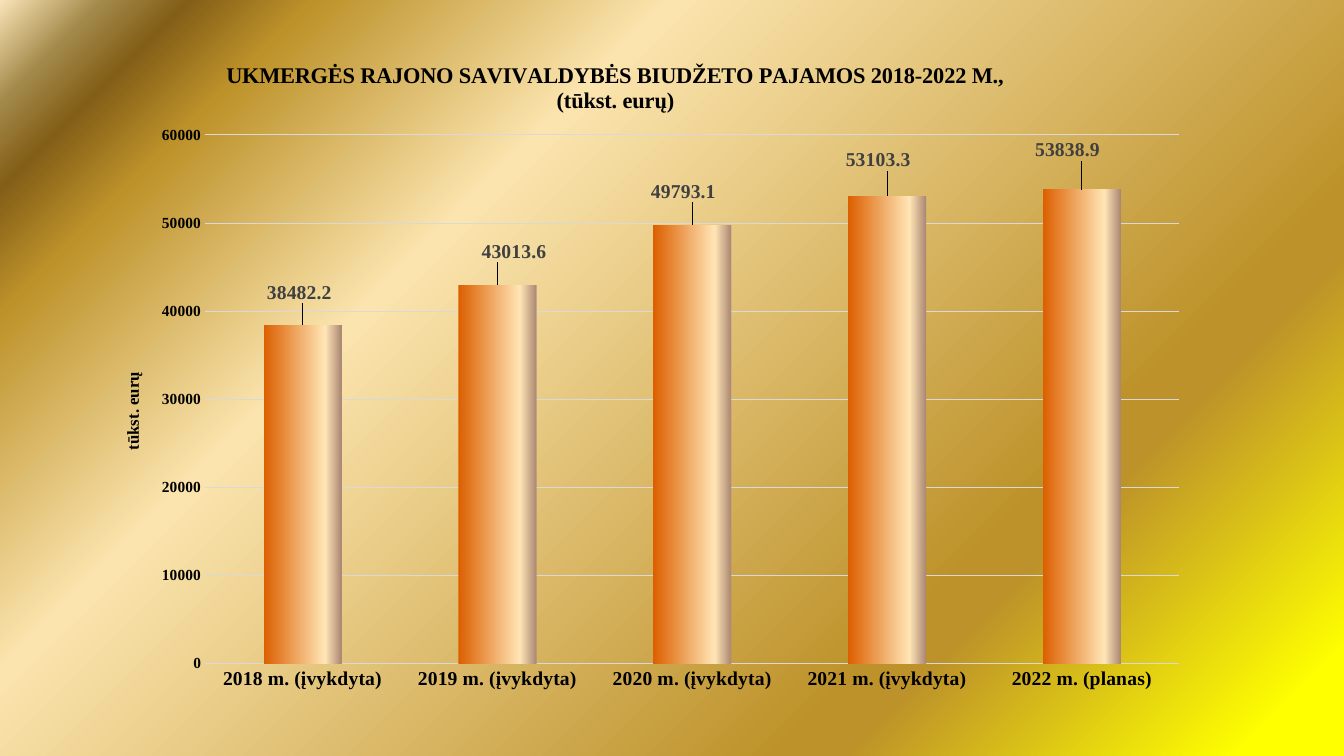
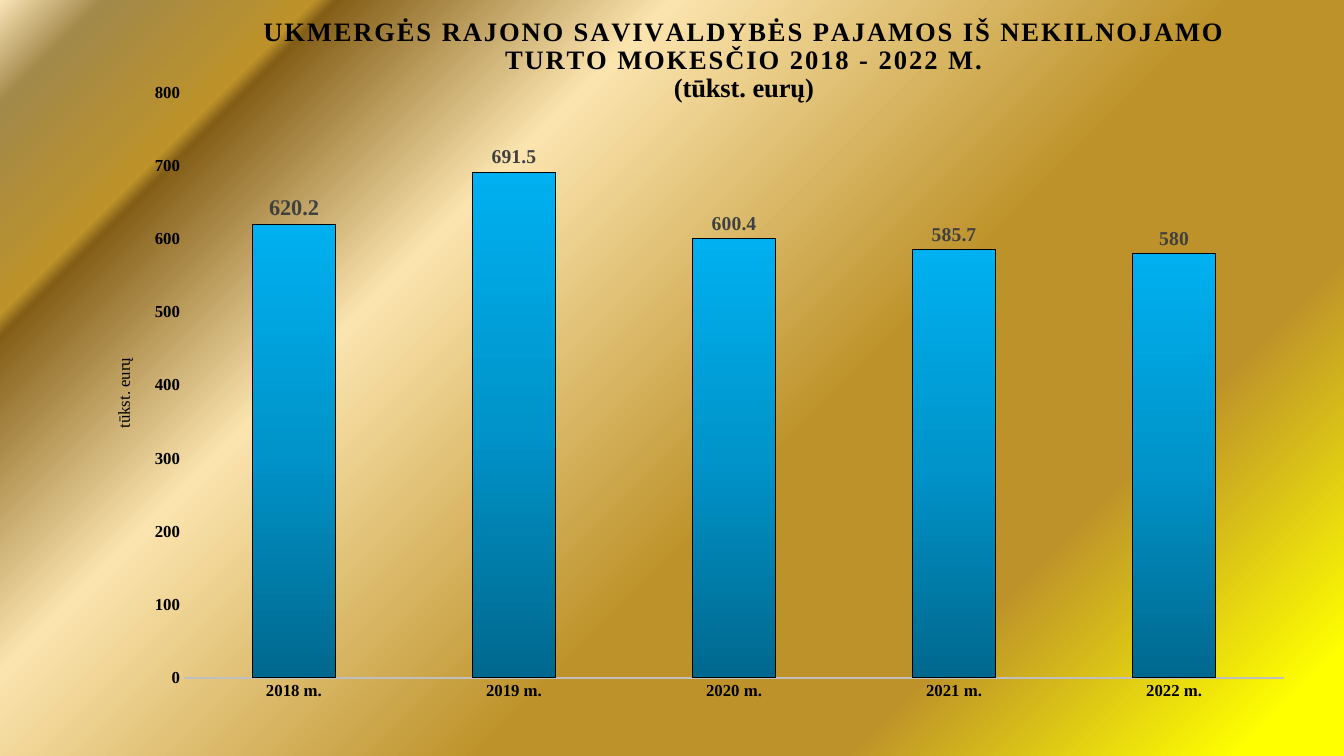
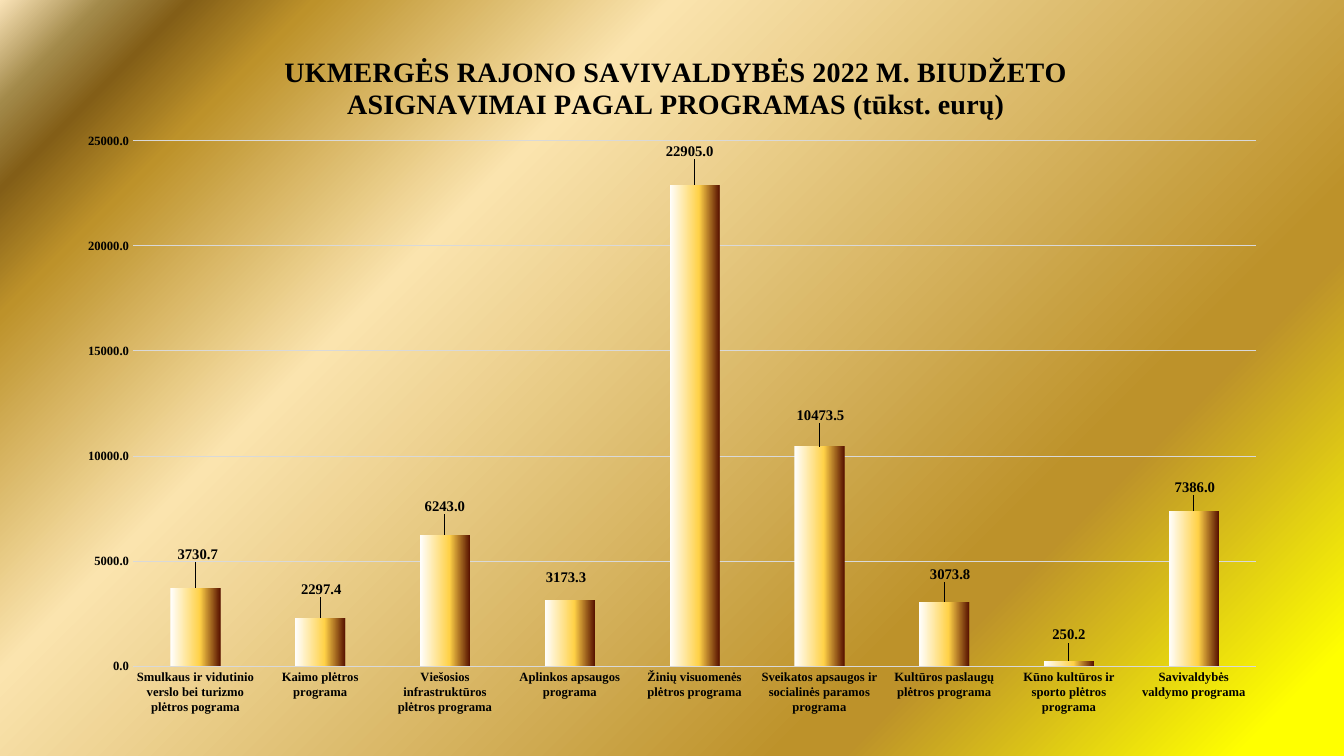
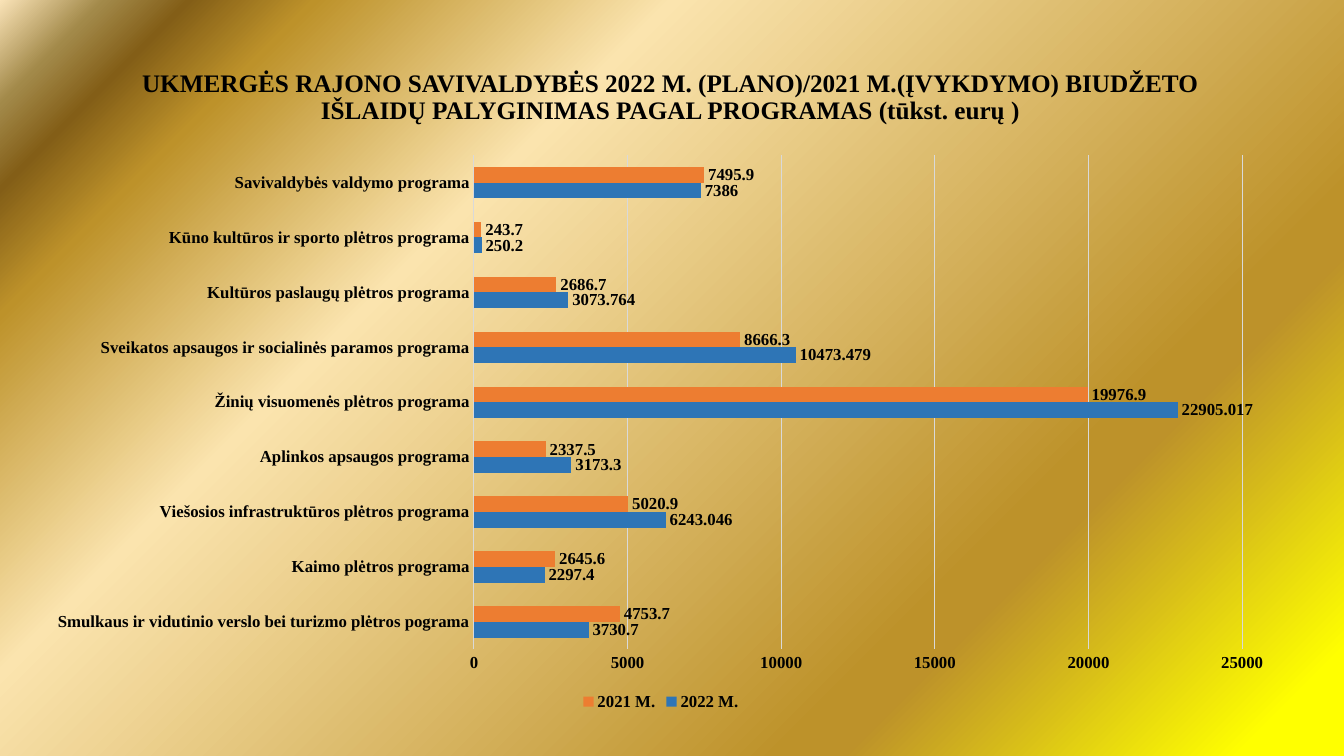
"""Build four budget slides with native charts on a shared gold background."""
import dataclasses

import pptx
import pptx.chart.data
import pptx.dml.color
import pptx.enum.chart
import pptx.enum.text
import pptx.oxml
import pptx.oxml.ns
import pptx.util

KIND = pptx.enum.chart.XL_CHART_TYPE
SPOT = pptx.enum.chart.XL_LABEL_POSITION


@dataclasses.dataclass(frozen=True)
class Theme:
    face: str = "Times New Roman"
    base: str = "Calibri"
    ink: str = "000000"
    soft: str = "404040"
    grid: str = "D9D9D9"
    axis: str = "BFBFBF"
    blue: str = "2E75B6"
    orange: str = "ED7D31"
    gold: tuple = ((5, "FFFF00"), (24, "BD922A"), (27, "BD922A"), (68, "FBE4AE"),
                   (85, "BD922A"), (91, "835E17"), (95, "A28949"), (100, "FAE3B7"))
    bronze: tuple = ((5, "FFFF00"), (24, "BD922A"), (41, "BD922A"), (68, "FBE4AE"),
                     (84, "835E17"), (85, "BD922A"), (95, "A28949"), (100, "FAE3B7"))
    copper: tuple = ((0, "DC5F00"), (79, "FFE5B5"), (100, "AB8874"))
    sky: tuple = ((0, "00688E"), (50, "0094CA"), (100, "00B0F0"))
    amber: tuple = ((0, "FFFFFF"), (59, "FFD147"), (100, "591300"))
    tiny: float = 9
    small: float = 10
    note: float = 10.5
    scale: float = 11
    text: float = 12
    label: float = 14
    head: float = 16
    title: float = 18
    wide: float = 19
    large: float = 20


class Deck:
    def __init__(self, theme):
        self.theme = theme
        self.show = pptx.Presentation()
        self.show.slide_width = pptx.util.Inches(13.33)
        self.show.slide_height = pptx.util.Inches(7.5)

    def color(self, code):
        return pptx.dml.color.RGBColor.from_string(code)

    def blend(self, fill, root, stops, angle):
        fill.gradient()
        fill.gradient_angle = (360 - angle) % 360
        bands = root.xpath(".//a:gsLst")[0]
        bands.clear()
        space = pptx.oxml.ns.nsdecls("a")
        for at, code in stops:
            bands.append(pptx.oxml.parse_xml(
                f'<a:gs {space} pos="{at * 1000}"><a:srgbClr val="{code}"/></a:gs>'))

    def page(self, stops):
        self.slide = self.show.slides.add_slide(self.show.slide_layouts[6])
        self.blend(self.slide.background.fill, self.slide.element, stops, 225)

    def area(self, box):
        sides = (self.show.slide_width, self.show.slide_height) * 2
        return [round(side * part / 100) for side, part in zip(sides, box)]

    def style(self, font, size, code=None, bold=True):
        font.name = self.theme.face
        font.size = pptx.util.Pt(size)
        font.bold = bold
        font.color.rgb = self.color(code or self.theme.ink)

    def stroke(self, line, code, width):
        line.color.rgb = self.color(code)
        line.width = pptx.util.Pt(width)

    def place(self, host, index, box, inner=False):
        for old in host.xpath("c:layout"):
            host.remove(old)
        rows = [("layoutTarget", "inner")] if inner else []
        if len(box) == 4 or host.tag.endswith("title"):
            rows += [("xMode", "edge"), ("yMode", "edge")]
        rows += [(name, part / 100) for name, part in zip("xywh", box)]
        body = "".join(f'<c:{name} val="{val}"/>' for name, val in rows)
        space = pptx.oxml.ns.nsdecls("c")
        host.insert(index, pptx.oxml.parse_xml(
            f"<c:layout {space}><c:manualLayout>{body}</c:manualLayout></c:layout>"))

    def title(self, text, box):
        frame = self.slide.shapes.add_textbox(*self.area(box)).text_frame
        frame.word_wrap = True
        frame.vertical_anchor = pptx.enum.text.MSO_ANCHOR.MIDDLE
        para = frame.paragraphs[0]
        para.text = text
        para.alignment = pptx.enum.text.PP_ALIGN.CENTER
        para.line_spacing = 0.9
        self.style(para.font, self.theme.title)

    def chart(self, kind, box, plot, cats, rows, top, step, form="General", gap=150):
        data = pptx.chart.data.CategoryChartData(number_format=form)
        data.categories = cats
        for name, vals in rows:
            data.add_series(name, vals)
        frame = self.slide.shapes.add_chart(kind, *self.area(box), data)
        self.graph = chart = frame.chart
        chart.font.name = self.theme.base
        chart.font.size = pptx.util.Pt(self.theme.small)
        chart.font.color.rgb = self.color(self.theme.ink)
        chart.has_title = False
        chart.has_legend = False
        chart.plots[0].vary_by_categories = False
        chart.plots[0].gap_width = gap
        chart.value_axis.minimum_scale = 0
        chart.value_axis.maximum_scale = top
        chart.value_axis.major_unit = step
        self.place(chart.element.xpath("c:chart/c:plotArea")[0], 0, plot, True)

    def axes(self, cat, val, line=None, grid=True):
        chart = self.graph
        for axis, size in ((chart.category_axis, cat), (chart.value_axis, val)):
            axis.major_tick_mark = pptx.enum.chart.XL_TICK_MARK.NONE
            axis.has_major_gridlines = False
            axis.format.line.fill.background()
            self.style(axis.tick_labels.font, size)
        if line:
            self.stroke(chart.category_axis.format.line, *line)
        if grid:
            self.stroke(chart.value_axis.major_gridlines.format.line, self.theme.grid, 0.75)

    def head(self, lines, size, spot, spread=()):
        frame = self.graph.chart_title.text_frame
        frame.text = "\n".join(lines)
        for para in frame.paragraphs:
            self.style(para.font, size)
        host = self.graph.element.xpath("c:chart/c:title")[0]
        fonts = host.xpath(".//a:defRPr")
        for row in spread:
            fonts[row].set("spc", "150")
        self.place(host, 1, spot)

    def unit(self, text, spot, bold):
        para = self.graph.value_axis.axis_title.text_frame.paragraphs[0]
        para.text = text
        self.style(para.font, self.theme.text, bold=bold)
        host = self.graph.element.xpath(".//c:valAx/c:title")[0]
        turn = host.xpath(".//a:bodyPr")[0]
        turn.set("rot", "-5400000")
        turn.set("vert", "horz")
        self.place(host, 1, spot)

    def labels(self, size, code=None):
        for row in self.graph.series:
            tags = row.data_labels
            tags.show_value = True
            tags.position = SPOT.OUTSIDE_END
            self.style(tags.font, size, code)

    def tag(self, index, size, code=None):
        mark = self.graph.series[0].points[index].data_label
        self.style(mark.font, size, code)
        mark.position = SPOT.OUTSIDE_END

    def shift(self, moves, size, code=None):
        for index, move in enumerate(moves):
            self.tag(index, size, code)
            self.place(self.graph.element.xpath(".//c:dLbl")[index], 1, move)

    def bars(self, stops, angle):
        self.blend(self.graph.series[0].format.fill, self.graph.element, stops, angle)

    def legend(self):
        self.graph.has_legend = True
        self.graph.legend.position = pptx.enum.chart.XL_LEGEND_POSITION.BOTTOM
        self.graph.legend.include_in_layout = False
        self.style(self.graph.legend.font, self.theme.text)


PLANS = ("Smulkaus ir vidutinio verslo bei turizmo plėtros pograma",
         "Kaimo plėtros programa",
         "Viešosios infrastruktūros plėtros programa",
         "Aplinkos apsaugos programa",
         "Žinių visuomenės plėtros programa",
         "Sveikatos apsaugos ir socialinės paramos programa",
         "Kultūros paslaugų plėtros programa",
         "Kūno kultūros ir sporto plėtros programa",
         "Savivaldybės valdymo programa")
UNIT = "tūkst. eurų"


def income(deck):
    theme = deck.theme
    deck.page(theme.gold)
    cats = [f"{year} m. (įvykdyta)" for year in range(2018, 2022)] + ["2022 m. (planas)"]
    vals = (38482.2, 43013.6, 49793.1, 53103.3, 53838.9)
    deck.chart(KIND.COLUMN_CLUSTERED, (6.98, 4.53, 82.37, 88.53), (10.06, 15.05, 88, 79),
               cats, [("Series 1", vals)], 60000, 10000)
    deck.axes(theme.label, theme.scale)
    deck.head(("UKMERGĖS RAJONO SAVIVALDYBĖS BIUDŽETO PAJAMOS 2018-2022 M.,", f"({UNIT})"),
              theme.head, (11.7, 3.6))
    deck.unit(UNIT, (2.3, 50), True)
    deck.bars(theme.copper, 0)
    deck.labels(theme.label, theme.soft)
    deck.shift(((-0.3, -2.5), (1.5, -2.7), (-0.8, -2.7), (-0.8, -3.1), (-1.3, -3.6)),
               theme.label, theme.soft)


def estate(deck):
    theme = deck.theme
    deck.page(theme.bronze)
    cats = [f"{year} m." for year in range(2018, 2023)]
    deck.chart(KIND.COLUMN_CLUSTERED, (4.8, 1.07, 91.67, 94.93), (9.7, 11.8, 89.3, 81.5),
               cats, [("Series 1", (620.2, 691.5, 600.4, 585.7, 580))], 800, 100, gap=164)
    deck.graph.plots[0].overlap = -22
    deck.axes(theme.text, theme.text, (theme.axis, 1.5), False)
    deck.head(("UKMERGĖS RAJONO SAVIVALDYBĖS PAJAMOS IŠ NEKILNOJAMO",
               "TURTO MOKESČIO 2018 - 2022 M.", f"({UNIT})"),
              theme.wide, (15.9, 0.7), (0, 1))
    deck.unit(UNIT, (3.7, 48.3), False)
    deck.bars(theme.sky, 270)
    deck.stroke(deck.graph.series[0].format.line, theme.ink, 0.75)
    deck.labels(theme.label, theme.soft)
    deck.tag(0, theme.head, theme.soft)


def grants(deck):
    theme = deck.theme
    deck.page(theme.gold)
    vals = (3730.7, 2297.4, 6243, 3173.3, 22905, 10473.5, 3073.8, 250.2, 7386)
    deck.chart(KIND.COLUMN_CLUSTERED, (4.73, 3.6, 90.55, 92.8), (5.7, 16.2, 92.3, 74.9),
               PLANS, [("Series 1", vals)], 25000, 5000, "0.0")
    deck.axes(theme.tiny, theme.tiny, (theme.grid, 1))
    deck.head(("UKMERGĖS RAJONO SAVIVALDYBĖS 2022 M. BIUDŽETO",
               f"ASIGNAVIMAI PAGAL PROGRAMAS ({UNIT})"), theme.large, (17.9, 3.6))
    deck.bars(theme.amber, 0)
    deck.labels(theme.note)
    deck.shift(((0.2, -3), (0.1, -2.3), (0, -2.4), (-0.3, -1.4), (-0.4, -3),
                (0.1, -2.6), (0.5, -2.1), (0, -2), (0.1, -1.6)), theme.note)


def match(deck):
    theme = deck.theme
    deck.page(theme.gold)
    deck.title("UKMERGĖS RAJONO SAVIVALDYBĖS 2022 M. (PLANO)/2021 M.(ĮVYKDYMO) BIUDŽETO "
               f"IŠLAIDŲ PALYGINIMAS PAGAL PROGRAMAS ({UNIT} )", (9.38, 8.93, 81, 8))
    plan = (3730.7, 2297.4, 6243.046, 3173.3, 22905.017, 10473.479, 3073.764, 250.2, 7386)
    done = (4753.7, 2645.6, 5020.9, 2337.5, 19976.9, 8666.3, 2686.7, 243.7, 7495.9)
    deck.chart(KIND.BAR_CLUSTERED, (2.48, 18.93, 93.4, 75.6), (35.1, 2.1, 61.2, 86.5),
               PLANS, [("2022 M.", plan), ("2021 M.", done)], 25000, 5000)
    deck.axes(theme.text, theme.text)
    for row, code in zip(deck.graph.series, (theme.blue, theme.orange)):
        row.format.fill.solid()
        row.format.fill.fore_color.rgb = deck.color(code)
    deck.labels(theme.text)
    deck.legend()


def main():
    deck = Deck(Theme())
    for build in (income, estate, grants, match):
        build(deck)
    deck.show.save("out.pptx")


if __name__ == "__main__":
    main()
